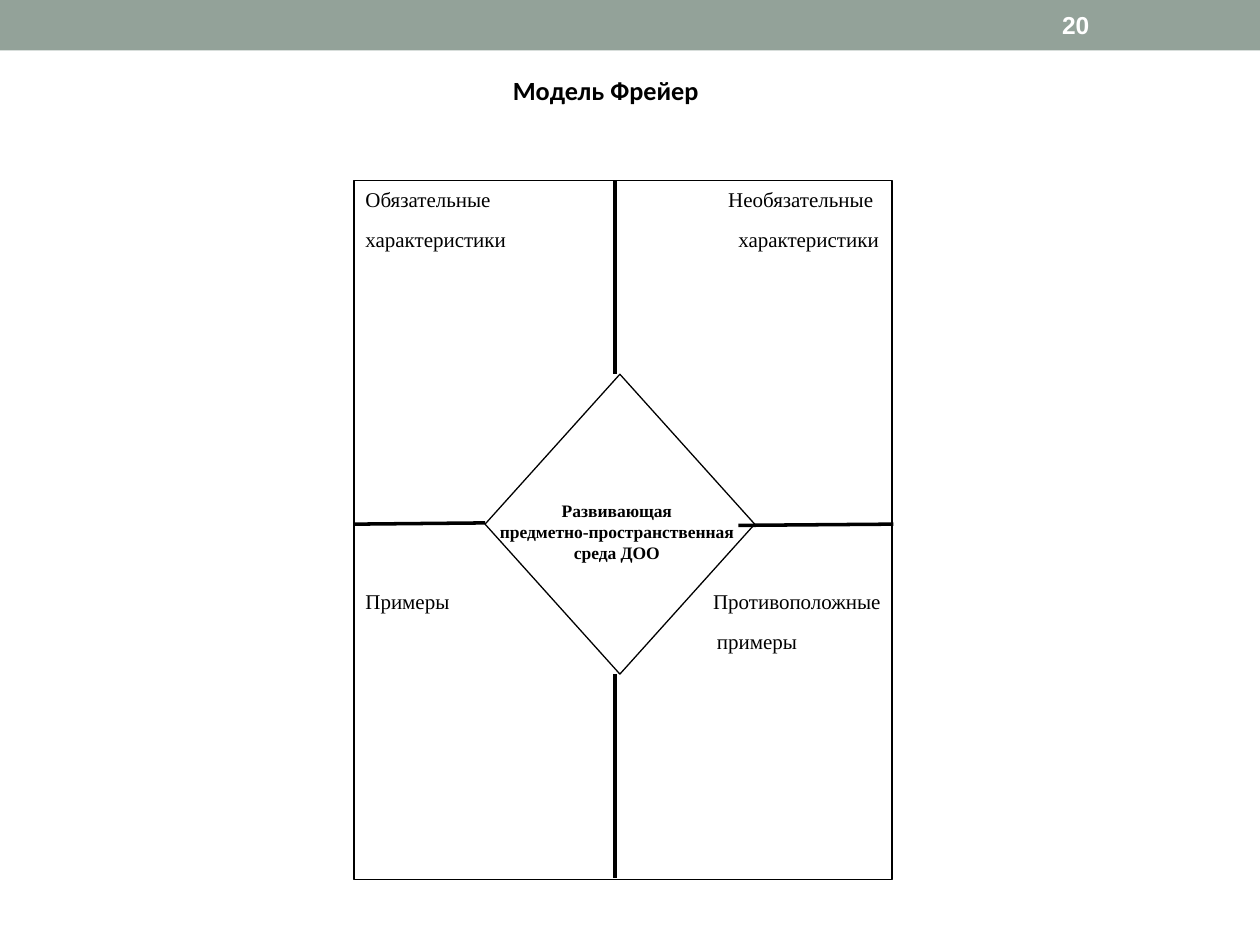
from pptx import Presentation
from pptx.dml.color import RGBColor
from pptx.enum.shapes import MSO_CONNECTOR, MSO_SHAPE
from pptx.enum.text import MSO_ANCHOR, MSO_AUTO_SIZE, PP_ALIGN
from pptx.oxml.ns import qn
from pptx.util import Inches, Pt
from lxml import etree

RECT, DIAMOND = MSO_SHAPE.RECTANGLE, MSO_SHAPE.DIAMOND
STRAIGHT = MSO_CONNECTOR.STRAIGHT
LEFT, CENTER = PP_ALIGN.LEFT, PP_ALIGN.CENTER
MIDDLE = MSO_ANCHOR.MIDDLE
GROW = MSO_AUTO_SIZE.SHAPE_TO_FIT_TEXT

SERIF = "Times New Roman"
BLACK, WHITE, SAGE = "000000", "FFFFFF", "93A299"
HAIR = Pt(0)

# Frame edges, centre line and label columns
X, Y, W, H = 2.81, 1.43, 4.27, 5.55
MID = 4.88
LABELS = [
    ("Обязательные", 2.9, 1.48, 1.11),
    ("характеристики", 2.9, 1.8, 1.19),
    ("Необязательные", 5.78, 1.48, 1.23),
    ("характеристики", 5.86, 1.8, 1.19),
    ("Примеры", 2.9, 4.67, 1.15),
    ("Противоположные", 5.66, 4.67, 1.4),
    ("примеры", 5.69, 4.99, 0.7),
]
LINES = [
    (MID, Y, MID, 2.97),
    (X, 4.16, 3.85, 4.15),
    (7.09, 4.16, 5.86, 4.17),
    (MID, 5.35, MID, 6.97),
]


def paint(color):
    return RGBColor.from_string(color)


def add_box(slide, kind, x, y, w, h, fill=None, line=None):
    box = slide.shapes.add_shape(kind, Inches(x), Inches(y), Inches(w), Inches(h))
    box.shadow.inherit = False
    if fill:
        box.fill.solid()
        box.fill.fore_color.rgb = paint(fill)
    else:
        box.fill.background()
    if line:
        box.line.color.rgb = paint(line)
        box.line.width = HAIR
    else:
        box.line.fill.background()


def add_line(slide, x1, y1, x2, y2):
    line = slide.shapes.add_connector(
        STRAIGHT, Inches(x1), Inches(y1), Inches(x2), Inches(y2))
    line.line.color.rgb = paint(BLACK)
    line.line.width = HAIR
    props = line._element.spPr
    etree.SubElement(props, qn("a:effectLst"))


def add_text(slide, text, x, y, w, h, size, font=SERIF, color=BLACK,
             bold=False, align=LEFT):
    box = slide.shapes.add_textbox(Inches(x), Inches(y), Inches(w), Inches(h))
    frame = box.text_frame
    frame.margin_left = frame.margin_right = 0
    frame.margin_top = frame.margin_bottom = 0
    frame.word_wrap = False
    frame.auto_size = GROW
    frame.text = text
    for para in frame.paragraphs:
        para.alignment = align
        para.font.size = Pt(size)
        para.font.name = font
        para.font.bold = bold
        para.font.color.rgb = paint(color)
    return frame


def main():
    prs = Presentation()
    prs.slide_width, prs.slide_height = Inches(10), Inches(7.5)
    slide = prs.slides.add_slide(prs.slide_layouts[6])

    # Top band and title
    add_box(slide, RECT, 0, 0, 10, 0.4, fill=SAGE)
    add_text(slide, "Модель Фрейер", 4.07, 0.59, 1.5, 0.31, 15, "Calibri", bold=True)

    # Frame with four labelled quarters
    add_box(slide, RECT, X, Y, W, H, WHITE, BLACK)
    for text, x, y, w in LABELS:
        add_text(slide, text, x, y, w, 0.23, 12)
    for ends in LINES:
        add_line(slide, *ends)

    # Central concept
    add_box(slide, DIAMOND, 3.85, 2.97, 2.14, 2.38, line=BLACK)
    add_text(slide, "Развивающая\nпредметно-пространственная\nсреда ДОО",
             3.94, 3.97, 1.91, 0.51, 10, bold=True, align=CENTER)

    # Slide number
    number = add_text(slide, "20", 8.43, 0.02, 1.07, 0.36, 14, "Arial", WHITE, True)
    number.auto_size = MSO_AUTO_SIZE.NONE
    number.word_wrap = True
    number.vertical_anchor = MIDDLE

    prs.save("out.pptx")


if __name__ == "__main__":
    main()
